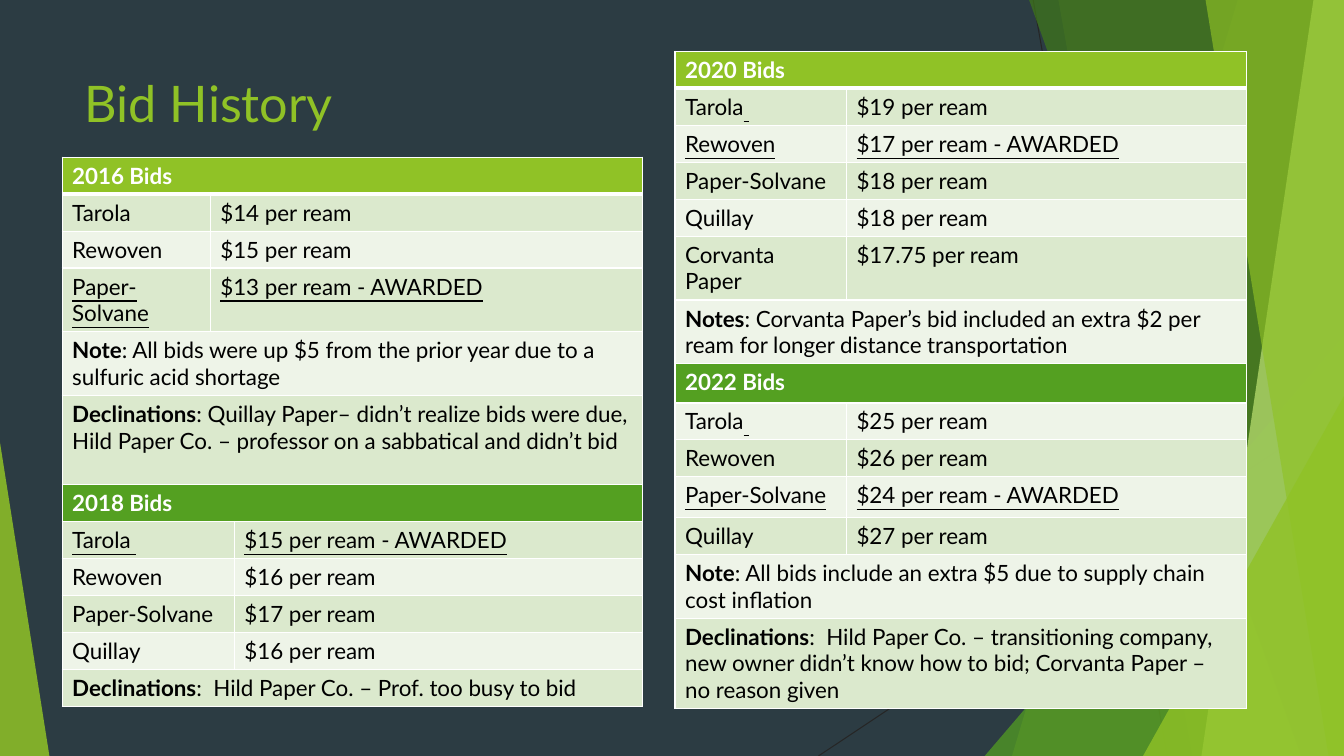
from lxml import etree
from pptx import Presentation
from pptx.dml.color import RGBColor
from pptx.enum.shapes import MSO_CONNECTOR, MSO_SHAPE
from pptx.enum.text import MSO_ANCHOR, PP_ALIGN
from pptx.oxml.ns import qn
from pptx.util import Pt

STRAIGHT = MSO_CONNECTOR.STRAIGHT
TRIANGLE = MSO_SHAPE.ISOSCELES_TRIANGLE
LEFT, JUSTIFY = PP_ALIGN.LEFT, PP_ALIGN.JUSTIFY
MIDDLE, TOP = MSO_ANCHOR.MIDDLE, MSO_ANCHOR.TOP

FONT = "Lato"
COLORS = {
    "background": "2C3C43", "hairline": "262626", "lime": "90C226",
    "green": "54A021", "forest": "3F7819", "pale": "C0E474",
    "odd_row": "DBE9CD", "even_row": "EEF4E8", "white": "FFFFFF", "black": "000000",
}
ROW, TWO_LINES, THREE_LINES = 26.4, 45.6, 64.8

# Each section: heading, heading colour, column where prices start, bids, notes.
# A "|" in a bidder's name starts an underlined ending.
EARLY_BIDS = [
    ("2016 Bids", "lime", 1,
     [("Tarola", "$14 per ream"), ("Rewoven", "$15 per ream"),
      ("Paper-Solvane", "$13 per ream - AWARDED")],
     [("Note", ": All bids were up $5 from the prior year due to a sulfuric acid shortage"),
      ("Declinations", ": Quillay Paper– didn’t realize bids were due, "
       "Hild Paper Co. – professor on a sabbatical and didn’t bid")]),
    ("2018 Bids", "green", 2,
     [("Tarola ", "$15 per ream - AWARDED"), ("Rewoven", "$16 per ream"),
      ("Paper-Solvane", "$17 per ream"), ("Quillay", "$16 per ream")],
     [("Declinations", ":  Hild Paper Co. – Prof. too busy to bid")]),
]
EARLY_HEIGHTS = [ROW] * 3 + [TWO_LINES] * 2 + [63.4] + [ROW] * 6

LATE_BIDS = [
    ("2020 Bids", "lime", 1,
     [("Tarola| ", "$19 per ream"), ("Rewoven", "$17 per ream - AWARDED"),
      ("Paper-Solvane", "$18 per ream"), ("Quillay", "$18 per ream"),
      ("Corvanta Paper", "$17.75 per ream")],
     [("Notes", ": Corvanta Paper’s bid included an extra $2 per ream "
       "for longer distance transportation")]),
    ("2022 Bids", "green", 1,
     [("Tarola| ", "$25 per ream"), ("Rewoven", "$26 per ream"),
      ("Paper-Solvane", "$24 per ream - AWARDED"), ("Quillay", "$27 per ream")],
     [("Note", ": All bids include an extra $5 due to supply chain cost inflation"),
      ("Declinations", ":  Hild Paper Co. – transitioning company, new owner didn’t "
       "know how to bid; Corvanta Paper – no reason given")]),
]
LATE_HEIGHTS = ([ROW] * 5 + [TWO_LINES] * 2 + [28, ROW, ROW, 29, ROW]
                + [TWO_LINES, THREE_LINES])


def rgb(name):
    return RGBColor.from_string(COLORS[name])


def paint(shape, color, opacity):
    shape.shadow.inherit = False
    shape.fill.solid()
    shape.fill.fore_color.rgb = rgb(color)
    shape.line.fill.background()
    color_node = shape._element.spPr.find(qn("a:solidFill"))[0]
    etree.SubElement(color_node, qn("a:alpha"), val=str(opacity * 1000))


# Background facets
def add_hairline(slide, x1, y1, x2, y2):
    line = slide.shapes.add_connector(STRAIGHT, Pt(x1), Pt(y1), Pt(x2), Pt(y2))
    line.line.color.rgb = rgb("hairline")
    line.line.width = Pt(0.75)
    etree.SubElement(line._element.spPr, qn("a:effectLst"))


def add_band(slide, box, top_x, bottom_x, color, opacity):
    left, top, width, height = box
    right, bottom = left + width, top + height
    builder = slide.shapes.build_freeform(Pt(left + top_x), Pt(top), scale=1.0)
    corners = [(right, top), (right, bottom), (left + bottom_x, bottom)]
    builder.add_line_segments([(Pt(x), Pt(y)) for x, y in corners], close=True)
    paint(builder.convert_to_shape(), color, opacity)


def add_corner(slide, box, width, height, apex, color, opacity):
    """Triangle in the lower right (apex 1) or lower left (apex 0) corner."""
    left = box[0] + apex * (box[2] - width)
    top = box[1] + box[3] - height
    corner = slide.shapes.add_shape(TRIANGLE, Pt(left), Pt(top), Pt(width), Pt(height))
    corner.adjustments[0] = apex
    paint(corner, color, opacity)


def add_facets(slide, box):
    left, top, width, height = box
    right, bottom = left + width, top + height
    add_hairline(slide, left + 738, top, left + 833.8, bottom)
    add_hairline(slide, right, top + 290.2, left + 584.6, bottom)
    add_band(slide, box, 884.2, 722.9, "lime", 30)
    add_band(slide, box, 756, 851.8, "lime", 20)
    add_corner(slide, box, 256.6, 300.2, 1, "green", 72)
    add_band(slide, box, 735.1, 929.5, "forest", 70)
    add_band(slide, box, 938.2, 858.2, "pale", 70)
    add_band(slide, box, 861.1, 949, "lime", 65)
    add_corner(slide, box, 143.5, 257, 1, "lime", 80)
    add_corner(slide, box, 35.3, 223.9, 0, "lime", 85)


# Title
def add_title(slide, box):
    title = slide.shapes.title
    title.left, title.top, title.width, title.height = map(Pt, box)
    title.text_frame.text = "Bid History"
    title.text_frame.vertical_anchor = MIDDLE
    heading = title.text_frame.paragraphs[0]
    heading.alignment = LEFT
    font = heading.runs[0].font
    font.name, font.size, font.color.rgb = FONT, Pt(36), rgb("lime")


# Bid tables
def write_cell(cell, runs, color="black", align=LEFT):
    """Each run is (text, bold, underline)."""
    paragraph = cell.text_frame.paragraphs[0]
    paragraph.alignment = align
    cell.vertical_anchor = TOP
    for text, bold, underline in runs:
        run = paragraph.add_run()
        run.text = text
        font = run.font
        font.name, font.size, font.color.rgb = FONT, Pt(16), rgb(color)
        font.bold, font.underline = bold, underline


def style_cell(cell, color, row):
    cell.fill.solid()
    cell.fill.fore_color.rgb = rgb(color)
    widths = {"lnL": 1, "lnR": 1, "lnT": 3 if row == 1 else 1, "lnB": 3 if row == 0 else 1}
    properties = cell._tc.get_or_add_tcPr()
    for position, (side, width) in enumerate(widths.items()):
        border = etree.Element(qn("a:" + side), w=str(Pt(width)))
        fill = etree.SubElement(border, qn("a:solidFill"))
        etree.SubElement(fill, qn("a:srgbClr"), val=COLORS["white"])
        properties.insert(position, border)


def add_bid_table(slide, left, top, widths, heights, sections):
    table = slide.shapes.add_table(len(heights), len(widths), Pt(left), Pt(top),
                                   Pt(sum(widths)), Pt(sum(heights))).table
    table.first_row = table.horz_banding = False
    for column, width in zip(table.columns, widths):
        column.width = Pt(width)
    for table_row, height in zip(table.rows, heights):
        table_row.height = Pt(height)
    last = len(widths) - 1

    def span(row, first, final):
        cell = table.cell(row, first)
        if final > first:
            cell.merge(table.cell(row, final))
        return cell

    def color_row(row, color=None):
        color = color or ("odd_row" if row % 2 else "even_row")
        for column in range(len(widths)):
            style_cell(table.cell(row, column), color, row)

    row = 0
    for heading, heading_color, price_column, bids, notes in sections:
        write_cell(span(row, 0, last), [(heading, True, False)], "white")
        color_row(row, heading_color)
        row += 1
        for bidder, price in bids:
            awarded = price.endswith("AWARDED")
            name, _, ending = bidder.partition("|")
            runs = [(name, False, awarded)] + ([(ending, False, True)] if ending else [])
            write_cell(span(row, 0, price_column - 1), runs,
                       align=JUSTIFY if ending else LEFT)
            write_cell(span(row, price_column, last), [(price, False, awarded)])
            color_row(row)
            row += 1
        for label, note in notes:
            write_cell(span(row, 0, last), [(label, True, False), (note, False, False)])
            color_row(row)
            row += 1


def main():
    deck = Presentation()
    deck.slide_width, deck.slide_height = Pt(960), Pt(540)
    slide = deck.slides.add_slide(deck.slide_layouts[5])
    slide.background.fill.solid()
    slide.background.fill.fore_color.rgb = rgb("background")
    add_facets(slide, (0, 0, 960, 540))
    add_title(slide, (53.3, 46.2, 398.9, 54))
    add_bid_table(slide, 482.2, 36.7, [122.4, 285.8], LATE_HEIGHTS, LATE_BIDS)
    add_bid_table(slide, 44.4, 112.3, [105.8, 10.1, 291.8], EARLY_HEIGHTS, EARLY_BIDS)
    deck.save("out.pptx")


if __name__ == "__main__":
    main()
